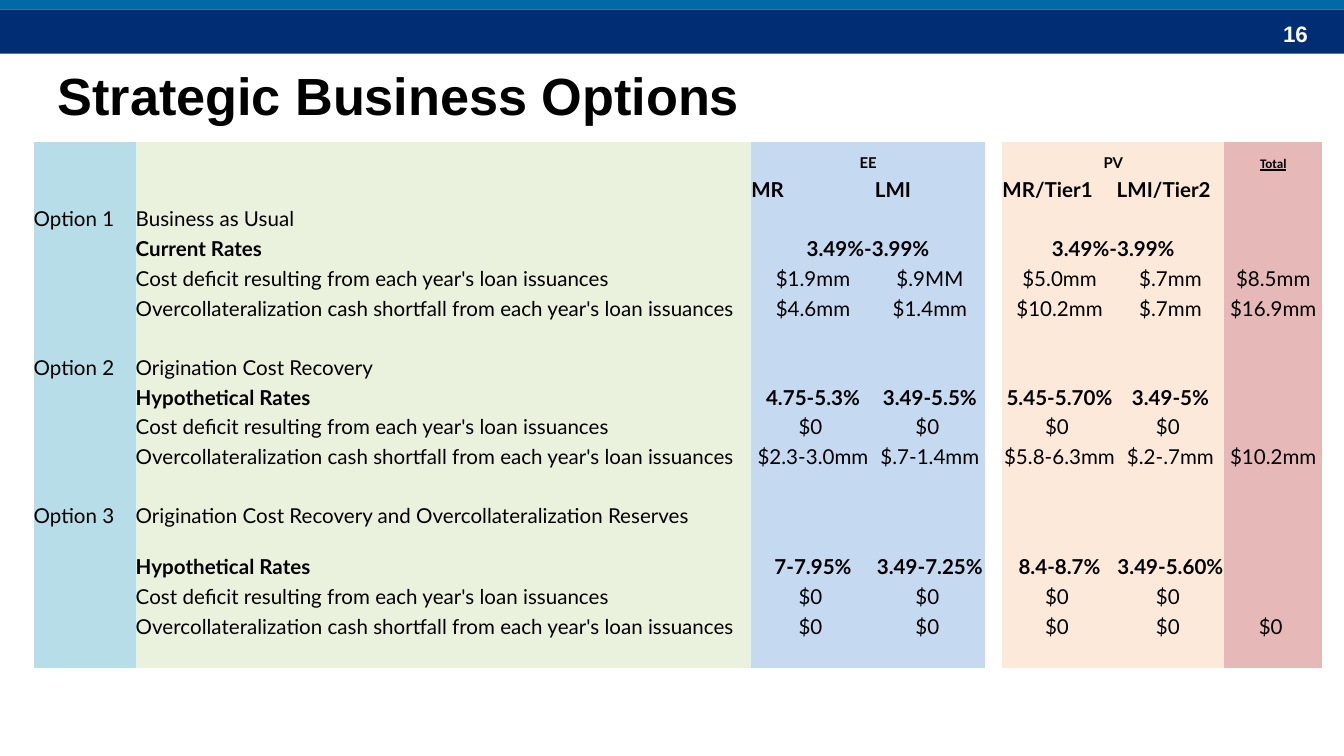
from lxml.etree import SubElement
from pptx import Presentation
from pptx.dml.color import RGBColor
from pptx.enum.shapes import MSO_SHAPE
from pptx.enum.text import MSO_ANCHOR, PP_ALIGN
from pptx.oxml.ns import qn
from pptx.util import Inches, Pt

# Content
TITLE = "Strategic Business Options"
PAGE = "16"
DEFICIT = "Cost deficit resulting from each year's loan issuances"
SHORTFALL = "Overcollateralization cash shortfall from each year's loan issuances"
RATES = "Hypothetical Rates"
ZERO = "$0 "
SPAN = "span"  # cell joined to the one on its left
EMPTY = ("",) * 8

# Columns: option, item, EE MR, EE LMI, gap, PV tier 1, PV tier 2, total
ROWS = [
    ("", "", "EE", SPAN, "", "PV", SPAN, "Total"),
    ("", "", "MR", "LMI", "", "MR/Tier1", "LMI/Tier2", ""),
    ("Option 1", "Business as Usual", "", "", "", "", "", ""),
    ("", "Current Rates", "3.49%-3.99%", SPAN, "", "3.49%-3.99%", SPAN, ""),
    ("", DEFICIT, "$1.9mm", "$.9MM", "", "$5.0mm", "$.7mm", "$8.5mm"),
    ("", SHORTFALL, "$4.6mm", "$1.4mm", "", "$10.2mm", "$.7mm", "$16.9mm"),
    EMPTY,
    ("Option 2", "Origination Cost Recovery", "", "", "", "", "", ""),
    ("", RATES, "4.75-5.3%", "3.49-5.5%", "", "5.45-5.70%", "3.49-5%", ""),
    ("", DEFICIT, ZERO, ZERO, "", ZERO, ZERO, ""),
    ("", SHORTFALL, "$2.3-3.0mm", "$.7-1.4mm", "", "$5.8-6.3mm", "$.2-.7mm", "$10.2mm"),
    EMPTY,
    ("Option 3", "Origination Cost Recovery and Overcollateralization Reserves",
     "", "", "", "", "", ""),
    ("", RATES, "7-7.95%", "3.49-7.25%", "", "8.4-8.7%", "3.49-5.60%", ""),
    ("", DEFICIT, ZERO, ZERO, "", ZERO, ZERO, ""),
    ("", SHORTFALL, ZERO, ZERO, "", ZERO, ZERO, ZERO),
    EMPTY,
]

# Look
COLORS = {
    "navy": "002D73", "blue": "0069A6", "white": "FFFFFF", "black": "000000",
    "option": "B6DDE8", "item": "EAF1DD", "ee": "C5D9F1", "pv": "FDE9D9",
    "total": "E6B9B8",
}
COL_FILLS = ["option", "item", "ee", "ee", None, "pv", "pv", "total"]
COL_WIDTHS = [0.76, 4.58, 0.92, 0.82, 0.13, 0.85, 0.8, 0.73]
TABLE_HEIGHT, TALL_ROW, TALL_HEIGHT = 3.92, 13, 0.38
NO_STYLE = "{2D5ABB26-0587-4C30-8999-92F81FD0307C}"
W = 10
H = W * 9 / 16


def color(name):
    return RGBColor.from_string(COLORS[name])


def add_run(p, text, size, font, bold=False, underline=False, fill="black"):
    r = p.add_run()
    r.text = text
    f = r.font
    f.size, f.name, f.bold, f.underline = Pt(size), font, bold, underline
    f.color.rgb = color(fill)


def add_bar(s, top, height, fill):
    sp = s.shapes.add_shape(MSO_SHAPE.RECTANGLE, 0, Inches(top), Inches(W), Inches(height))
    sp.shadow.inherit = False
    sp.fill.solid()
    sp.fill.fore_color.rgb = color(fill)
    sp.line.fill.background()


def add_label(s, box, text, size, fill, align):
    tf = s.shapes.add_textbox(*map(Inches, box)).text_frame
    tf.word_wrap = True
    tf.vertical_anchor = MSO_ANCHOR.MIDDLE
    p = tf.paragraphs[0]
    p.alignment = align
    add_run(p, text, size, "Arial", bold=True, fill=fill)


def fill_cell(cell, row, col, text):
    cell.margin_left = cell.margin_right = cell.margin_top = cell.margin_bottom = 0
    cell.vertical_anchor = MSO_ANCHOR.BOTTOM
    if COL_FILLS[col]:
        cell.fill.solid()
        cell.fill.fore_color.rgb = color(COL_FILLS[col])
    else:
        cell.fill.background()

    p = cell.text_frame.paragraphs[0]
    if text in ("", SPAN):
        # Small end mark keeps an empty row at its height
        SubElement(p._p, qn("a:endParaRPr")).set("sz", "800")
        return
    header = row < 2
    centered = col > 1 and row != 1
    p.alignment = PP_ALIGN.CENTER if centered else PP_ALIGN.LEFT
    size, font = 11, "Calibri" if header and col == 7 else "Lato"
    if row == 0:
        size = 7 if col == 7 else 8
    bold = header or ROWS[row][1].endswith("Rates")
    add_run(p, text, size, font, bold, underline=header)


prs = Presentation()
prs.slide_width, prs.slide_height = Inches(W), Inches(H)
s = prs.slides.add_slide(prs.slide_layouts[6])

# Header bars, page number and title
add_bar(s, 0.07, 0.33, "navy")
add_bar(s, 0, 0.07, "blue")
add_label(s, (9.08, 0.1, 0.75, 0.3), PAGE, 12, "white", PP_ALIGN.RIGHT)
add_label(s, (0.33, 0.43, 9.17, 0.55), TITLE, 28, "black", PP_ALIGN.LEFT)

# Options table
row_height = (TABLE_HEIGHT - TALL_HEIGHT) / (len(ROWS) - 1)
heights = [TALL_HEIGHT if i == TALL_ROW else row_height for i in range(len(ROWS))]
frame = s.shapes.add_table(len(ROWS), len(COL_WIDTHS), Inches(0.25), Inches(1.06),
                           Inches(sum(COL_WIDTHS)), Inches(TABLE_HEIGHT))
frame.element.xpath(".//a:tableStyleId")[0].text = NO_STYLE
table = frame.table
table.first_row = table.horz_banding = False
for column, width in zip(table.columns, COL_WIDTHS):
    column.width = Inches(width)
for table_row, height in zip(table.rows, heights):
    table_row.height = Inches(height)
for i, values in enumerate(ROWS):
    for j, text in enumerate(values):
        fill_cell(table.cell(i, j), i, j, text)
        if text == SPAN:
            table.cell(i, j - 1).merge(table.cell(i, j))

prs.save("out.pptx")
